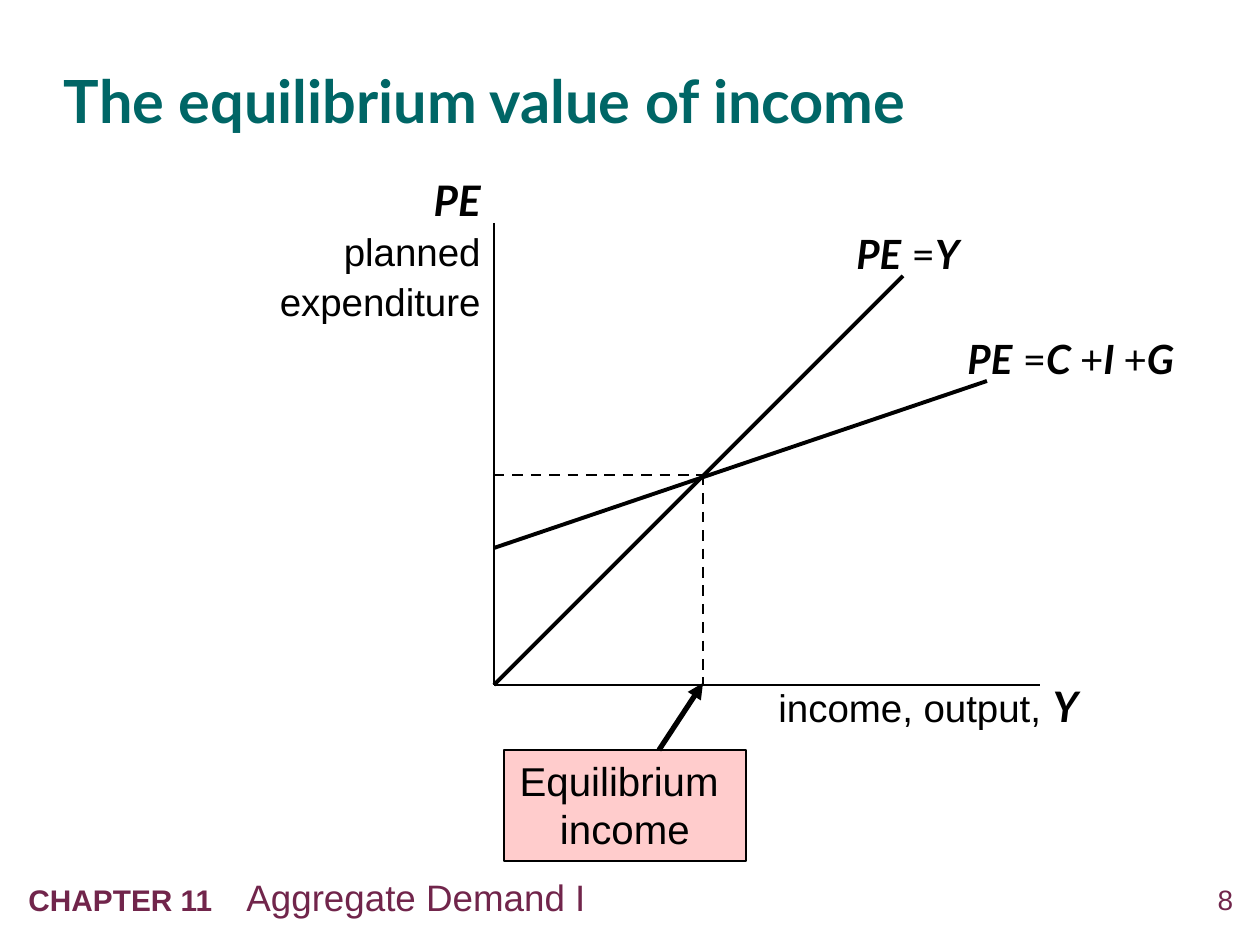
import lxml.etree
import pptx
import pptx.dml.color
import pptx.enum.dml
import pptx.enum.shapes
import pptx.enum.text
import pptx.oxml.ns
import pptx.util

PX = pptx.util.Inches(1) / 126
ALIGN = pptx.enum.text.PP_ALIGN
ANCHOR = pptx.enum.text.MSO_ANCHOR
RGB = pptx.dml.color.RGBColor.from_string
qn = pptx.oxml.ns.qn

THEME = {
    "ink": RGB("000000"), "title": RGB("006666"),
    "footer": RGB("71254B"), "callout": RGB("FFCCCC"),
    "body_font": "Arial", "symbol_font": "Lato",
    "title_size": 34, "axis_symbol": 24, "axis_label": 22, "curve_label": 23,
    "chapter_size": 17, "footer_size": 21, "number_size": 16,
}
BODY, SYMBOL = THEME["body_font"], THEME["symbol_font"]

presentation = pptx.Presentation()
presentation.slide_width = pptx.util.Inches(10)
presentation.slide_height = pptx.util.Inches(7.5)
slide = presentation.slides.add_slide(presentation.slide_layouts[6])


def write(shape, paragraphs, color="ink", align=ALIGN.LEFT, inset=True, anchor=ANCHOR.TOP):
    """Each paragraph is a list of runs: (text, size, font, bold, italic)."""
    frame = shape.text_frame
    frame.word_wrap = True
    frame.vertical_anchor = anchor
    if not inset:
        frame.margin_left = frame.margin_right = frame.margin_top = frame.margin_bottom = 0
    for index, runs in enumerate(paragraphs):
        paragraph = frame.add_paragraph() if index else frame.paragraphs[0]
        paragraph.alignment = align
        paragraph.font.color.rgb = THEME[color]
        for position, (text, size, font, bold, italic) in enumerate(runs):
            for line_number, line in enumerate(text.split("\n")):
                if line_number:
                    paragraph.add_line_break()
                run = paragraph.add_run()
                run.text = line
                run.font.size = pptx.util.Pt(size)
                run.font.name = font
                run.font.bold, run.font.italic = bold, italic
                run.font.color.rgb = THEME[color]
    return frame


def add_line(start, end, width, dashed=False, arrow=False):
    points = [round(value * PX) for value in (*start, *end)]
    line = slide.shapes.add_connector(pptx.enum.shapes.MSO_CONNECTOR.STRAIGHT, *points)
    line.line.color.rgb = THEME["ink"]
    line.line.width = pptx.util.Pt(width)
    if dashed:
        line.line.dash_style = pptx.enum.dml.MSO_LINE.DASH
    if arrow:
        lxml.etree.SubElement(line.line._get_or_add_ln(), qn("a:tailEnd"), type="triangle")
    lxml.etree.SubElement(line._element.spPr, qn("a:effectLst"))


# Axes, curves and guides meet at shared points
origin = (494, 685)
equilibrium = (703, 475)
add_line((origin[0], 223), origin, 1)
add_line(origin, (1040, origin[1]), 1)
add_line(origin, (903, 276), 2.25)
add_line((origin[0], 548), (987, 381), 2.25)
add_line(equilibrium, (equilibrium[0], origin[1]), 1.5, dashed=True)
add_line((origin[0], equilibrium[1]), equilibrium, 1.5, dashed=True)

# Equilibrium callout
callout = slide.shapes.add_shape(
    pptx.enum.shapes.MSO_SHAPE.RECTANGLE,
    *(round(value * PX) for value in (504, 750, 242, 111)))
callout.shadow.inherit = False
callout.fill.solid()
callout.fill.fore_color.rgb = THEME["callout"]
callout.line.color.rgb = THEME["ink"]
callout.line.width = pptx.util.Pt(0.75)
write(callout, [[("Equilibrium \nincome", THEME["curve_label"], BODY, False, False)]],
      align=ALIGN.CENTER)
add_line((659, 750), (703, 683), 3, arrow=True)

# Text: box in px, paragraphs, formatting
curve, axis, label = THEME["curve_label"], THEME["axis_symbol"], THEME["axis_label"]
plane = (SYMBOL, False, False)
strong = (SYMBOL, True, True)
plain = (BODY, False, False)
texts = {
    "title": ((64, 33, 1137, 130),
              [[("The equilibrium value of income", THEME["title_size"], SYMBOL, True, False)]],
              {"color": "title", "inset": False, "anchor": ANCHOR.MIDDLE}),
    "vertical axis": ((208, 168, 285, 161),
                      [[("PE", axis, *strong)], [("planned", label, *plain)],
                       [("expenditure", label, *plain)]],
                      {"align": ALIGN.RIGHT}),
    "horizontal axis": ((766, 674, 357, 63),
                        [[("income, output,", label, *plain), (" ", axis, *plain),
                          ("Y", axis, *strong)]], {}),
    "45-degree line": ((844, 223, 152, 62),
                       [[("PE", curve, *strong), (" =", curve, *plane),
                         ("Y", curve, *strong)]], {}),
    "expenditure line": ((955, 328, 284, 60),
                         [[("PE", curve, *strong), (" =", curve, *plane),
                           ("C ", curve, *strong), ("+", curve, *plane),
                           ("I ", curve, *strong), ("+", curve, *plane),
                           ("G", curve, *strong)]], {}),
    "footer": ((16, 869, 1031, 57),
               [[("CHAPTER 11\t", THEME["chapter_size"], BODY, True, False),
                 ("Aggregate Demand I", THEME["footer_size"], *plain)]],
               {"color": "footer"}),
    "slide number": ((1164, 883, 69, 40), [[("8", THEME["number_size"], *plain)]],
                     {"color": "footer", "align": ALIGN.RIGHT, "inset": False}),
}
frames = {}
for name, (box, paragraphs, options) in texts.items():
    shape = slide.shapes.add_textbox(*(round(value * PX) for value in box))
    frames[name] = write(shape, paragraphs, **options)

# Paragraph spacing and the footer tab stop
frames["title"].paragraphs[0].line_spacing = 1.05
for paragraph in frames["vertical axis"].paragraphs:
    paragraph.space_before = pptx.util.Pt(2)
properties = frames["footer"].paragraphs[0]._p.get_or_add_pPr()
tab_list = properties.makeelement(qn("a:tabLst"))
lxml.etree.SubElement(tab_list, qn("a:tab"), pos=str(round(218 * PX)), algn="l")
properties.insert(0, tab_list)

presentation.save("out.pptx")
